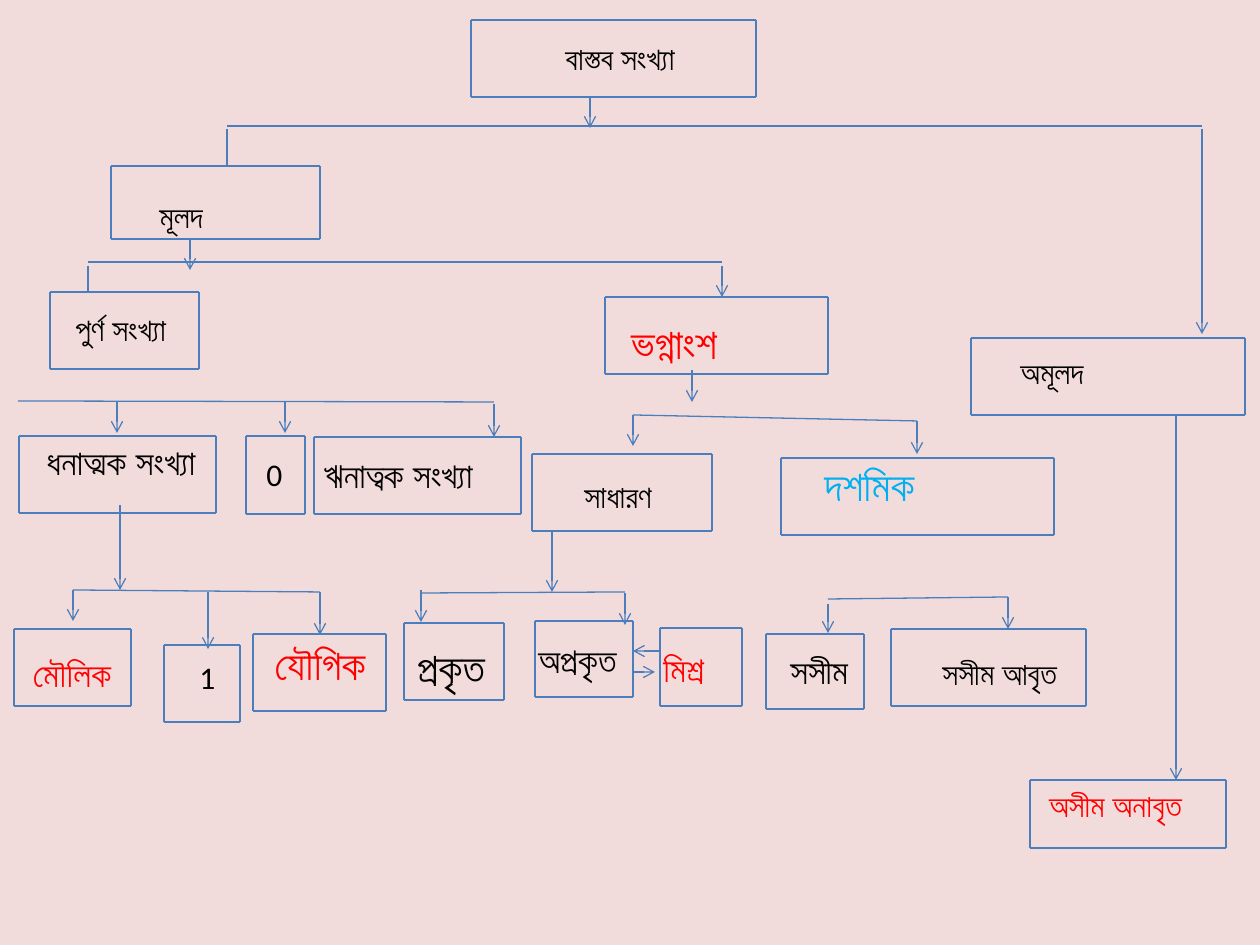
from lxml.etree import SubElement
from pptx import Presentation
from pptx.dml.color import RGBColor
from pptx.enum.shapes import MSO_CONNECTOR as Link
from pptx.enum.text import MSO_AUTO_SIZE as Fit, PP_ALIGN as Align
from pptx.oxml.ns import qn
from pptx.util import Pt

SCALE = 914400 / 126
BLUE, RED, SKY, BLACK, PINK = "4B7EBC", "FF0000", "00B0F0", "000000", "F2DCDB"
MID, JUST = Align.CENTER, Align.JUSTIFY
BIG, LARGE = dict(size=24), dict(size=20)

NODES = [
    ("বাস্তব সংখ্যা", (471, 20, 285, 77), (553, 33, 145, 50), dict(wrap=False)),
    ("মূলদ", (111, 166, 209, 73), (147, 191, 81, 50), dict(wrap=False)),
    ("অমূলদ", (971, 338, 274, 77), (1008, 347, 194, 50), {}),
    ("পুর্ণ সংখ্যা", (50, 292, 149, 77), (63, 304, 136, 50), {}),
    ("ভগ্নাংশ", (605, 297, 223, 77), (606, 311, 136, 63), dict(BIG, color=RED, align=MID)),
    ("ধনাত্মক সংখ্যা", (19, 436, 197, 77), (34, 434, 181, 55), dict(LARGE, bold=True, wrap=False)),
    ("0", (246, 436, 59, 78), (254, 449, 66, 50), dict(face="Calibri")),
    ("ঋনাত্বক সংখ্যা", (314, 437, 207, 77), (311, 447, 194, 55), dict(LARGE, bold=True)),
    ("সাধারণ", (532, 454, 180, 77), (572, 471, 102, 50), {}),
    ("দশমিক", (781, 458, 273, 77), (812, 453, 158, 63), dict(BIG, color=SKY)),
    ("মৌলিক", (14, 629, 117, 77), (0, 646, 144, 55), dict(LARGE, color=RED, align=MID)),
    ("1", (164, 645, 76, 77), (187, 652, 78, 50), dict(face="Calibri")),
    ("যৌগিক", (253, 634, 133, 77), (240, 632, 160, 63), dict(BIG, color=RED, align=MID)),
    ("প্রকৃত", (404, 623, 100, 77), (405, 635, 106, 63), BIG),
    ("অপ্রকৃত", (535, 621, 98, 76), (526, 632, 127, 55), LARGE),
    ("মিশ্র", (660, 628, 82, 78), (651, 641, 116, 55), dict(LARGE, color=RED, align=JUST)),
    ("সসীম", (766, 634, 98, 75), (778, 643, 97, 55), LARGE),
    ("সসীম আবৃত", (891, 629, 195, 77), (930, 648, 156, 50), {}),
    ("অসীম অনাবৃত", (1030, 780, 196, 68), (1029, 780, 173, 50), dict(color=RED, align=MID)),
]

BARS = [
    (227, 126, 1202, 126), (227, 129, 227, 166), (88, 262, 722, 262),
    (88, 266, 88, 292), (18, 401, 494, 402), (633, 415, 917, 421),
    (73, 590, 320, 592), (421, 593, 625, 592), (828, 599, 1008, 597),
]

ARROWS = [
    (590, 97, 590, 128), (1202, 129, 1202, 334), (190, 238, 190, 270),
    (722, 266, 722, 297), (692, 370, 692, 402), (117, 401, 117, 433),
    (285, 401, 285, 433), (494, 404, 494, 437), (633, 415, 633, 446),
    (917, 421, 917, 454), (120, 505, 120, 590), (552, 530, 552, 592),
    (73, 590, 73, 621), (208, 592, 208, 649), (320, 592, 320, 635),
    (421, 590, 421, 622), (625, 593, 625, 625), (828, 604, 828, 633),
    (1008, 597, 1008, 629), (1176, 415, 1176, 780),
    (633, 672, 655, 672), (661, 651, 633, 651),
]


def px(*vals):
    """Turn pixel lengths into EMU."""
    return [round(val * SCALE) for val in vals]


def paint(code):
    """Turn a hex string into a colour."""
    return RGBColor.from_string(code)


def add_line(shapes, ends, head=False):
    """Draw a thin line, with an arrowhead if asked."""
    line = shapes.add_connector(Link.STRAIGHT, *px(*ends))
    line.line.color.rgb = paint(BLUE)
    line.line.width = Pt(0.75)
    if head:
        SubElement(line.line._get_or_add_ln(), qn("a:tailEnd"), type="arrow")
    SubElement(line._element.spPr, qn("a:effectLst"))


def add_frame(slide, area):
    """Draw a frame as a group of four lines."""
    left, top, width, height = area
    right, low = left + width, top + height
    group = slide.shapes.add_group_shape()
    for ends in ((left, top, right, top), (left, low, left, top),
                 (left, low, right, low), (right, low, right, top)):
        add_line(group.shapes, ends)


def add_text(slide, text, area, size=18, color=BLACK, face="Lato",
             bold=False, align=Align.LEFT, wrap=True):
    """Write a label in a text box."""
    frame = slide.shapes.add_textbox(*px(*area)).text_frame
    frame.word_wrap = wrap
    frame.auto_size = Fit.SHAPE_TO_FIT_TEXT
    para = frame.paragraphs[0]
    para.alignment = align
    run = para.add_run()
    run.text = text
    font = run.font
    font.name, font.size, font.bold = face, Pt(size), bold
    font.color.rgb = paint(color)


def main():
    """Build the number tree."""
    deck = Presentation()
    deck.slide_width, deck.slide_height = px(1260, 945)
    slide = deck.slides.add_slide(deck.slide_layouts[6])
    fill = slide.background.fill
    fill.solid()
    fill.fore_color.rgb = paint(PINK)
    for text, frame, area, style in NODES:
        add_frame(slide, frame)
        add_text(slide, text, area, **style)
    for ends in BARS:
        add_line(slide.shapes, ends)
    for ends in ARROWS:
        add_line(slide.shapes, ends, head=True)
    deck.save("out.pptx")


if __name__ == "__main__":
    main()
